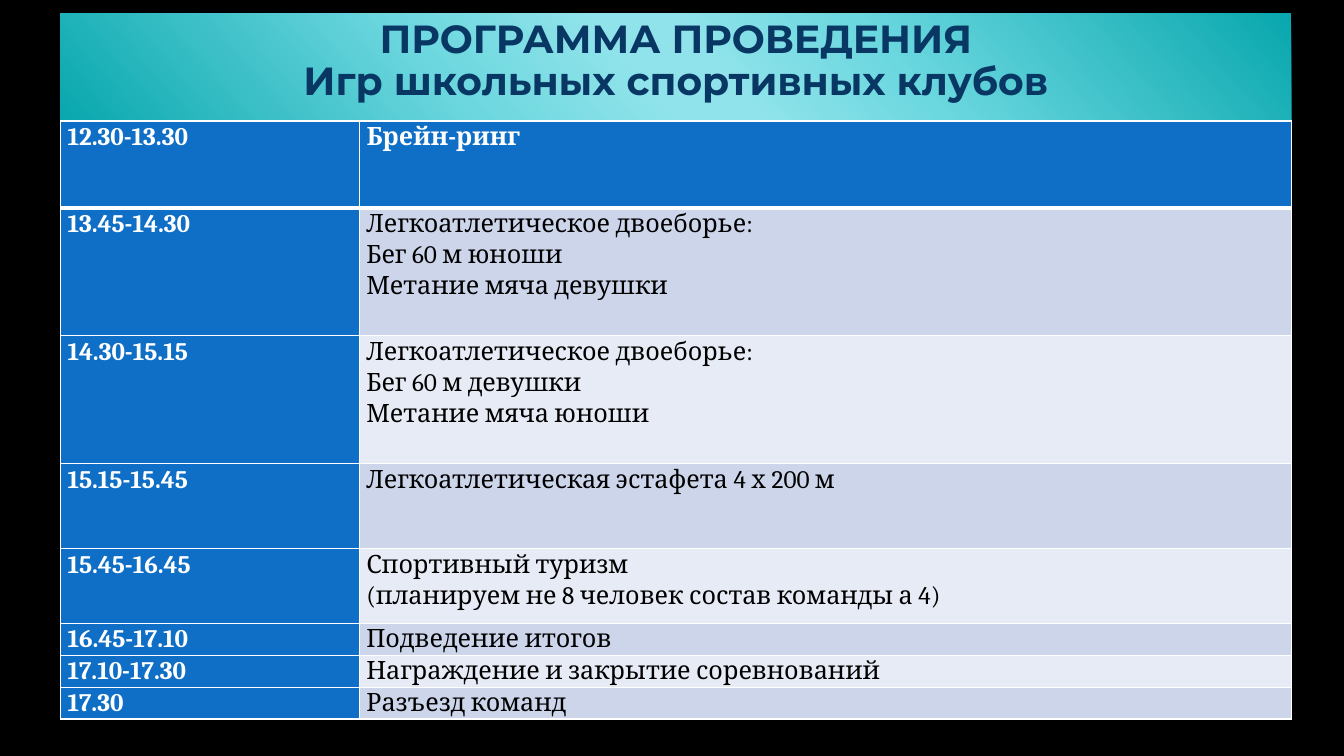
"""Build the programme slide of the school sports club games."""
from lxml.etree import SubElement
from pptx import Presentation
from pptx.dml.color import RGBColor
from pptx.enum.text import MSO_ANCHOR, MSO_AUTO_SIZE, PP_ALIGN
from pptx.oxml.ns import qn
from pptx.util import Inches, Pt

THEME = {
    "background": "000000", "title": "083763", "accent": "0F6FC6",
    "light": "FFFFFF", "dark": "000000", "bands": ["E7EBF5", "CCD5EA"],
    "gradient": [(0, "09A7AE"), (33, "6BD7DF"), (47, "90E3EA"),
                 (53, "90E3EA"), (68, "6DD7DF"), (100, "09A7AE")],
    "title_font": "Montserrat", "body_font": "Cambria",
    "title_size": 28, "body_size": 18, "border": 1, "header_border": 3,
}
TITLE = ["ПРОГРАММА ПРОВЕДЕНИЯ", "Игр школьных спортивных клубов"]
PROGRAMME = [
    (11.47, "12.30-13.30", "Брейн-ринг"),
    (16.93, "13.45-14.30", "Легкоатлетическое двоеборье:\nБег 60 м юноши\nМетание мяча девушки"),
    (16.93, "14.30-15.15", "Легкоатлетическое двоеборье:\nБег 60 м девушки\nМетание мяча юноши"),
    (11.2, "15.15-15.45", "Легкоатлетическая эстафета 4 х 200 м"),
    (9.92, "15.45-16.45", "Спортивный туризм\n(планируем не 8 человек состав команды а 4)"),
    (4.23, "16.45-17.10", "Подведение итогов"),
    (4.23, "17.10-17.30", "Награждение и закрытие соревнований"),
    (4.23, "17.30", "Разъезд команд"),
]
COLUMN_SHARES = [22.23, 69.34]
LEFT_SHARE, TITLE_TOP_SHARE, TABLE_TOP_SHARE = 4.5, 1.73, 16


def assign(target, values):
    """Set every named attribute on the target."""
    for name, value in values.items():
        setattr(target, name, value)


def write(frame, lines, spacing, alignment, font_name, size, color, bold):
    """Fill a text frame with equally formatted paragraphs."""
    frame.text = "\n".join(lines)
    for paragraph in frame.paragraphs:
        assign(paragraph, {"line_spacing": spacing, "alignment": alignment,
                           "space_before": Pt(0), "space_after": Pt(0)})
        for run in paragraph.runs:
            assign(run.font, {"name": font_name, "size": Pt(size), "bold": bold})
            run.font.color.rgb = RGBColor.from_string(color)


presentation = Presentation()
assign(presentation, {"slide_width": Inches(13.33), "slide_height": Inches(7.5)})
column_unit = presentation.slide_width / 100
row_unit = presentation.slide_height / 100
left = int(LEFT_SHARE * column_unit)
width = int(sum(COLUMN_SHARES) * column_unit)
table_top = int(TABLE_TOP_SHARE * row_unit)
title_top = int(TITLE_TOP_SHARE * row_unit)

slide = presentation.slides.add_slide(presentation.slide_layouts[5])
slide.background.fill.solid()
slide.background.fill.fore_color.rgb = RGBColor.from_string(THEME["background"])

title = slide.shapes.title
assign(title, {"left": left, "top": title_top, "width": width,
               "height": table_top - title_top})
title.fill.gradient()
title.fill.gradient_angle = 221
stops = title.element.spPr.find(qn("a:gradFill")).find(qn("a:gsLst"))
for stop in list(stops):
    stops.remove(stop)
for position, color in THEME["gradient"]:
    stop = SubElement(stops, qn("a:gs"), pos=str(position * 1000))
    SubElement(stop, qn("a:srgbClr"), val=color)
assign(title.text_frame, {"word_wrap": True, "auto_size": MSO_AUTO_SIZE.NONE,
                          "vertical_anchor": MSO_ANCHOR.MIDDLE,
                          "margin_top": Inches(0.02), "margin_bottom": Inches(0.12)})
write(title.text_frame, TITLE, 0.9, PP_ALIGN.CENTER, THEME["title_font"],
      THEME["title_size"], THEME["title"], True)

table_height = int(sum(entry[0] for entry in PROGRAMME) * row_unit)
table = slide.shapes.add_table(len(PROGRAMME), len(COLUMN_SHARES), left, table_top,
                               width, table_height).table
for column, share in zip(table.columns, COLUMN_SHARES):
    column.width = int(share * column_unit)

for row_index, (share, *texts) in enumerate(PROGRAMME):
    table.rows[row_index].height = int(share * row_unit)
    for column_index, text in enumerate(texts):
        cell = table.cell(row_index, column_index)
        heading = row_index == 0 or column_index == 0
        assign(cell, {"margin_left": Inches(0.07), "margin_right": Inches(0.07),
                      "margin_top": 0, "margin_bottom": 0,
                      "vertical_anchor": MSO_ANCHOR.TOP})
        write(cell.text_frame, text.split("\n"), 1.07, PP_ALIGN.LEFT, THEME["body_font"],
              THEME["body_size"], THEME["light" if heading else "dark"], heading)
        properties = cell._tc.get_or_add_tcPr()
        for side in ["lnL", "lnR", "lnT", "lnB"]:
            thick = (row_index, side) in [(0, "lnB"), (1, "lnT")]
            points = THEME["header_border" if thick else "border"]
            line = SubElement(properties, qn(f"a:{side}"), w=str(Pt(points)))
            line_fill = SubElement(line, qn("a:solidFill"))
            SubElement(line_fill, qn("a:srgbClr"), val=THEME["light"])
        cell.fill.solid()
        cell.fill.fore_color.rgb = RGBColor.from_string(
            THEME["accent"] if heading else THEME["bands"][row_index % 2])

presentation.save("out.pptx")
